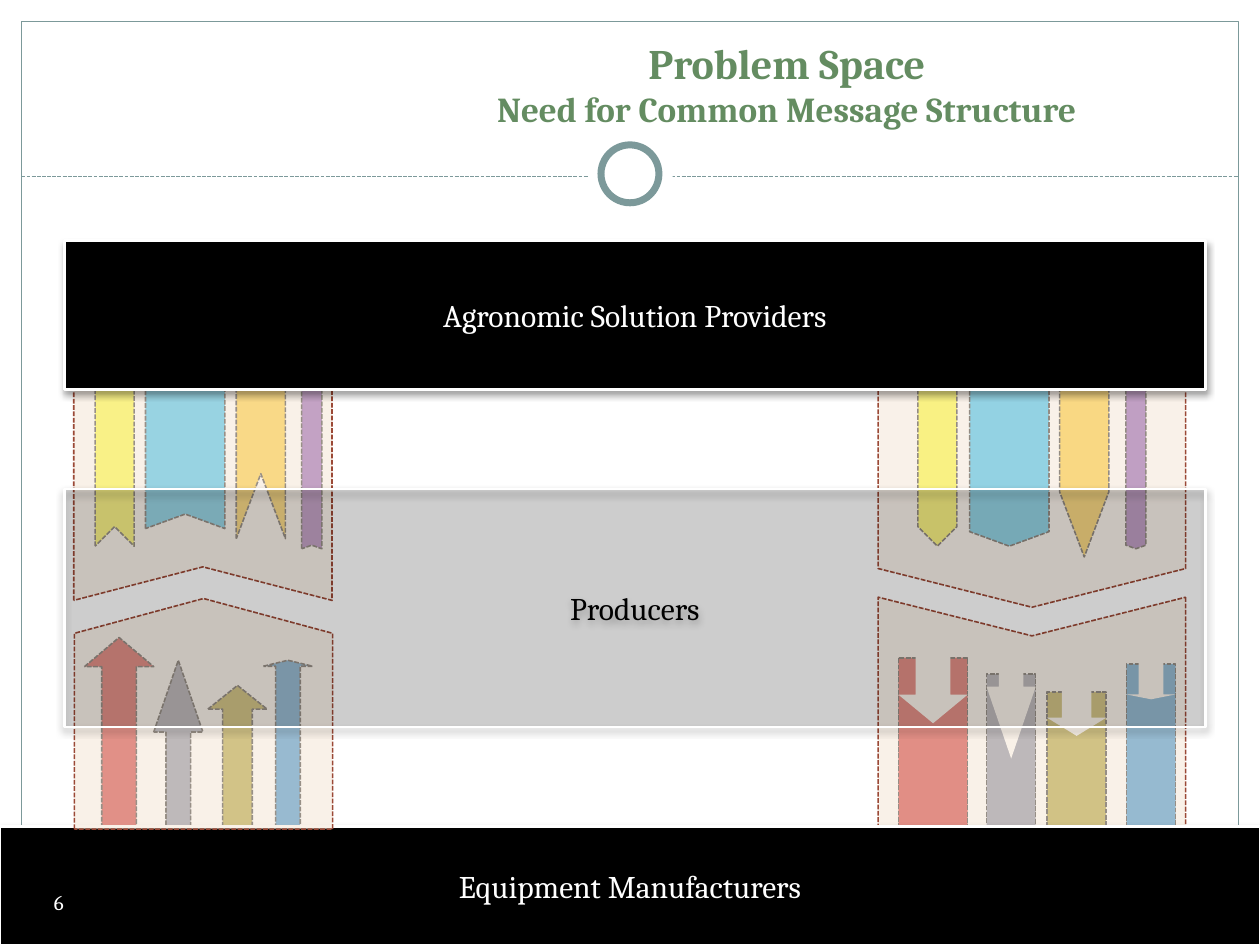
"""Build the slide on the need for a common message structure."""
from lxml import etree
from pptx import Presentation
from pptx.dml.color import RGBColor
from pptx.enum.dml import MSO_LINE_DASH_STYLE as DASH
from pptx.enum.shapes import MSO_CONNECTOR, MSO_SHAPE as SHAPE
from pptx.enum.text import MSO_ANCHOR as ANCHOR, PP_ALIGN as ALIGN
from pptx.oxml import parse_xml
from pptx.oxml.ns import nsdecls, qn
from pptx.util import Pt

PX = 9144
FONT = "Cambria"
COLORS = {
    "white": "FFFFFF", "black": "000000", "frame": "7C999A", "title": "648C61",
    "red": "C00000", "slate": "646B86", "olive": "998700", "blue": "0070C0",
    "purple": "7030A0", "orange": "FFC000", "yellow": "FFFF00", "cyan": "00B0F0",
    "cream": "F6E9DB", "rust": "9B4936",
}


def draw(kind, box, fill=None, line=None, width=0.9, dash=None, alpha=None, adj=(), rot=0):
    shape = slide.shapes.add_shape(kind, *(n * PX for n in box))
    shape.shadow.inherit = False
    shape.rotation = rot
    for index, value in enumerate(adj):
        shape.adjustments[index] = value
    if fill:
        shape.fill.solid()
        shape.fill.fore_color.rgb = RGBColor.from_string(COLORS[fill])
        if alpha:
            color = shape.fill._xPr.find(qn("a:solidFill"))[0]
            etree.SubElement(color, qn("a:alpha")).set("val", str(alpha * 1000))
    else:
        shape.fill.background()
    if line:
        shape.line.color.rgb = RGBColor.from_string(COLORS[line])
        shape.line.width = Pt(width)
        shape.line.dash_style = dash
    else:
        shape.line.fill.background()
    return shape


def style(run, size, color, bold=False):
    run.font.name = FONT
    run.font.size = Pt(size)
    run.font.bold = bold
    run.font.color.rgb = RGBColor.from_string(COLORS[color])


deck = Presentation()
deck.slide_width, deck.slide_height = 1000 * PX, 750 * PX
slide = deck.slides.add_slide(deck.slide_layouts[6])

for margin in ((0, 0, 1000, 152), (0, 0, 17, 750), (983, 0, 17, 750)):
    draw(SHAPE.RECTANGLE, margin, "white")
draw(SHAPE.RECTANGLE, (17, 17, 966, 716), None, "frame", 0.75)
divider = slide.shapes.add_connector(
    MSO_CONNECTOR.STRAIGHT, 17 * PX, 140 * PX, 983 * PX, 140 * PX)
divider.line.color.rgb = RGBColor.from_string(COLORS["frame"])
divider.line.width = Pt(0.75)
divider.line.dash_style = DASH.SQUARE_DOT
etree.SubElement(divider._element.spPr, qn("a:effectLst"))
draw(SHAPE.OVAL, (467, 105, 67, 67), "white")
draw(SHAPE.OVAL, (477, 115, 46, 46), "white", "frame", 4)

downward_bars = [
    ("blue", (894, 527, 39, 130)), ("olive", (831, 549, 47, 109)),
    ("slate", (783, 535, 39, 124)), ("red", (713, 522, 55, 138)),
]
for color, box in downward_bars:
    draw(SHAPE.RECTANGLE, box, color, "black", dash=DASH.SQUARE_DOT)

notches = [
    ((713, 520, 55, 54), 0.421), ((783, 533, 39, 69), 1.461),
    ((831, 548, 47, 36), 0.401), ((894, 523, 39, 32), 0.122),
]
for box, head in notches:
    draw(SHAPE.UP_ARROW, box, "white", adj=(0.5, head), rot=180)

ribbons = [
    ("purple", 0.179, (797, 323, 209, 16), (143, 323, 209, 16)),
    ("orange", 1.322, (738, 300, 245, 39), (92, 293, 230, 39)),
    ("yellow", 0.5, (662, 336, 164, 31), (9, 336, 164, 31)),
    ("cyan", 0.183, (719, 320, 164, 63), (72, 313, 150, 63)),
]
for side, rot in enumerate((90, 270)):
    for color, point, *boxes in ribbons:
        draw(SHAPE.CHEVRON, boxes[side], color, "black",
             dash=DASH.SQUARE_DOT, adj=(point,), rot=rot)

upward_arrows = [
    ("olive", 0.401, (165, 544, 47, 116)), ("slate", 1.461, (122, 524, 39, 135)),
    ("blue", 0.122, (209, 524, 39, 135)), ("red", 0.421, (67, 506, 55, 154)),
]
for color, head, box in upward_arrows:
    draw(SHAPE.UP_ARROW, box, color, "black", dash=DASH.SQUARE_DOT, adj=(0.5, head))

for box, rot, alpha in (((701, 470, 236, 244), 90, 61), ((701, 242, 236, 244), 90, 60),
                        ((43, 256, 236, 205), 270, 62)):
    draw(SHAPE.CHEVRON, box, "cream", "rust", dash=DASH.SQUARE_DOT,
         alpha=alpha, adj=(0.13,), rot=rot)

parties = [
    ("Equipment Manufacturers", (0, 656, 1000, 94), None, "white"),
    ("Agronomic Solution Providers", (51, 191, 906, 118), None, "white"),
    ("Producers", (51, 388, 906, 189), 15, "black"),
]
for name, box, alpha, text_color in parties:
    band = draw(SHAPE.RECTANGLE, box, "black", "white", 1.57, alpha=alpha)
    band._element.spPr.find(qn("a:effectLst")).append(parse_xml(
        f'<a:outerShdw {nsdecls("a")} blurRad="{Pt(4)}" dist="{Pt(2)}" dir="5400000" '
        f'rotWithShape="0"><a:srgbClr val="{COLORS["black"]}"><a:alpha val="35000"/>'
        '</a:srgbClr></a:outerShdw>'))
    band.text_frame.text = name
    band.text_frame.vertical_anchor = ANCHOR.MIDDLE
    label = band.text_frame.paragraphs[0]
    label.alignment = ALIGN.CENTER
    style(label.runs[0], 18, text_color)
    if name == "Equipment Manufacturers":
        draw(SHAPE.PENTAGON, (70, 464, 183, 205), "cream", "rust",
             dash=DASH.SQUARE_DOT, alpha=62, adj=(0.151,), rot=270)

number = slide.shapes.add_textbox(33 * PX, 701 * PX, 392 * PX, 40 * PX).text_frame
number.word_wrap = True
number.text = "6"
style(number.paragraphs[0].runs[0], 12, "white")

title = slide.shapes.add_textbox(283 * PX, 25 * PX, 683 * PX, 83 * PX).text_frame
title.word_wrap = True
title.vertical_anchor = ANCHOR.BOTTOM
title.text = "Problem Space\vNeed for Common Message Structure"
heading = title.paragraphs[0]
heading.alignment = ALIGN.CENTER
for run, size in zip(heading.runs, (24, 20)):
    style(run, size, "title", True)

deck.save("out.pptx")
